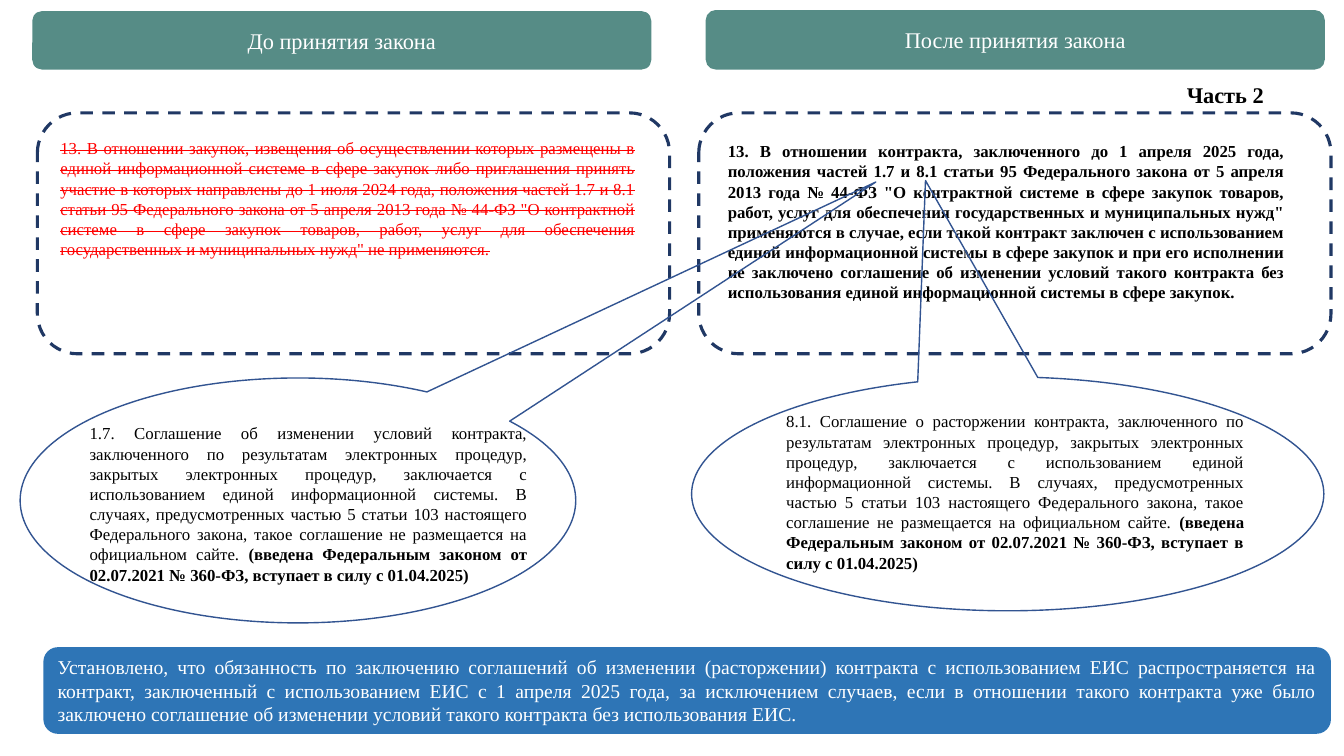
from pptx import Presentation
from pptx.dml.color import RGBColor
from pptx.enum.dml import MSO_LINE
from pptx.enum.shapes import MSO_SHAPE
from pptx.enum.text import MSO_ANCHOR, MSO_AUTO_SIZE, PP_ALIGN
from pptx.util import Inches, Pt

HUES = {
    "teal": "568C86", "blue": "2E75B6", "navy": "203864", "edge": "325491",
    "white": "FFFFFF", "black": "000000", "red": "FF0000",
}
LAW = "(введена Федеральным законом от 02.07.2021 № 360-ФЗ, вступает в силу с 01.04.2025)"
HEADS = [
    ("До принятия закона", (2.4, 1.47, 46.06, 7.73)),
    ("После принятия закона", (52.51, 1.33, 46.06, 7.87)),
]
RULES = [
    ("13. В отношении закупок, извещения об осуществлении которых размещены в единой "
     "информационной системе в сфере закупок либо приглашения принять участие в которых "
     "направлены до 1 июля 2024 года, положения частей 1.7 и 8.1 статьи 95 Федерального "
     "закона от 5 апреля 2013 года № 44-ФЗ \"О контрактной системе в сфере закупок товаров, "
     "работ, услуг для обеспечения государственных и муниципальных нужд\" не применяются.",
     2.78, (3.75, 17.6, 44.26, 28.27), {"hue": "red", "strike": True}),
    ("13. В отношении контракта, заключенного до 1 апреля 2025 года, положения частей 1.7 "
     "и 8.1 статьи 95 Федерального закона от 5 апреля 2013 года № 44-ФЗ \"О контрактной "
     "системе в сфере закупок товаров, работ, услуг для обеспечения государственных и "
     "муниципальных нужд\" применяются в случае, если такой контракт заключен с "
     "использованием единой информационной системы в сфере закупок и при его исполнении "
     "не заключено соглашение об изменении условий такого контракта без использования "
     "единой информационной системы в сфере закупок.",
     51.99, (53.41, 18, 42.91, 25.6), {"bold": True}),
]
NOTES = [
    ("1.7. Соглашение об изменении условий контракта, заключенного",
     (1.5, 50, 41.34, 32.4), (1.04, -1.3), (5.93, 55.33, 34.06, 22.93)),
    ("8.1. Соглашение о расторжении контракта, заключенного",
     (51.46, 49.87, 47.04, 30.93), (-0.13, -1.34), (57.76, 53.73, 35.56, 22.93)),
]
TAIL = (" по результатам электронных процедур, закрытых электронных процедур, заключается "
        "с использованием единой информационной системы. В случаях, предусмотренных частью 5 "
        "статьи 103 настоящего Федерального закона, такое соглашение не размещается на "
        "официальном сайте. ")
SUM = ("Установлено, что обязанность по заключению соглашений об изменении (расторжении) "
       "контракта с использованием ЕИС распространяется на контракт, заключенный с "
       "использованием ЕИС с 1 апреля 2025 года, за исключением случаев, если в отношении "
       "такого контракта уже было заключено соглашение об изменении условий такого контракта "
       "без использования ЕИС.")


class Page:
    font = "Times New Roman"

    def __init__(self, deck):
        self.size = deck.slide_width, deck.slide_height
        self.slide = deck.slides.add_slide(deck.slide_layouts[5])

    def hue(self, name):
        return RGBColor.from_string(HUES[name])

    def place(self, box):
        return [round(part * side / 100) for part, side in zip(box, self.size * 2)]

    def label(self, shape, runs, align, anchor=MSO_ANCHOR.TOP, wrap=True):
        frame = shape.text_frame
        form = {"word_wrap": wrap, "auto_size": MSO_AUTO_SIZE.NONE, "vertical_anchor": anchor}
        for key, value in form.items():
            setattr(frame, key, value)
        para = frame.paragraphs[0]
        para.alignment = align
        for text, style in runs:
            run = para.add_run()
            run.text = text
            form = {"name": self.font, "size": Pt(style.get("size", 12)),
                    "bold": style.get("bold", False)}
            for key, value in form.items():
                setattr(run.font, key, value)
            run.font.color.rgb = self.hue(style.get("hue", "black"))
            if style.get("strike"):
                run._r.get_or_add_rPr().set("strike", "sngStrike")

    def title(self, text, box):
        shape = self.slide.shapes.title
        for key, value in zip(("left", "top", "width", "height"), self.place(box)):
            setattr(shape, key, value)
        self.label(shape, [(text, {"size": 16, "bold": True})], PP_ALIGN.LEFT, wrap=False)

    def text(self, runs, box):
        shape = self.slide.shapes.add_textbox(*self.place(box))
        self.label(shape, runs, PP_ALIGN.JUSTIFY)

    def shape(self, kind, box):
        shape = self.slide.shapes.add_shape(kind, *self.place(box))
        shape.shadow.inherit = False
        return shape

    def bar(self, text, box, fill, size, align):
        shape = self.shape(MSO_SHAPE.ROUNDED_RECTANGLE, box)
        shape.fill.solid()
        shape.fill.fore_color.rgb = self.hue(fill)
        shape.line.fill.background()
        self.label(shape, [(text, {"size": size, "hue": "white"})], align, MSO_ANCHOR.MIDDLE)

    def ring(self, kind, box, hue, form):
        shape = self.shape(kind, box)
        shape.fill.background()
        shape.line.color.rgb = self.hue(hue)
        for key, value in form.items():
            setattr(shape.line, key, value)
        return shape

    def frame(self, box):
        self.ring(MSO_SHAPE.ROUNDED_RECTANGLE, box, "navy",
                  {"width": Pt(2.25), "dash_style": MSO_LINE.DASH})

    def bubble(self, box, tip):
        shape = self.ring(MSO_SHAPE.OVAL_CALLOUT, box, "edge", {"width": Pt(1)})
        for place, value in enumerate(tip):
            shape.adjustments[place] = value


def main():
    deck = Presentation()
    deck.slide_width, deck.slide_height = Inches(13.33), Inches(7.5)
    page = Page(deck)
    page.title("Часть 2", (87.55, 10, 7.35, 4.93))
    for text, box in HEADS:
        page.bar(text, box, "teal", 16, PP_ALIGN.CENTER)
    page.bar(SUM, (3.23, 85.6, 95.8, 11.47), "blue", 14, PP_ALIGN.JUSTIFY)
    for text, left, box, style in RULES:
        page.frame((left, 14.93, 47.04, 31.87))
        page.text([(text, style)], box)
    for lead, oval, tip, box in NOTES:
        page.bubble(oval, tip)
        page.text([(lead + TAIL, {}), (LAW, {"bold": True})], box)
    deck.save("out.pptx")


if __name__ == "__main__":
    main()
